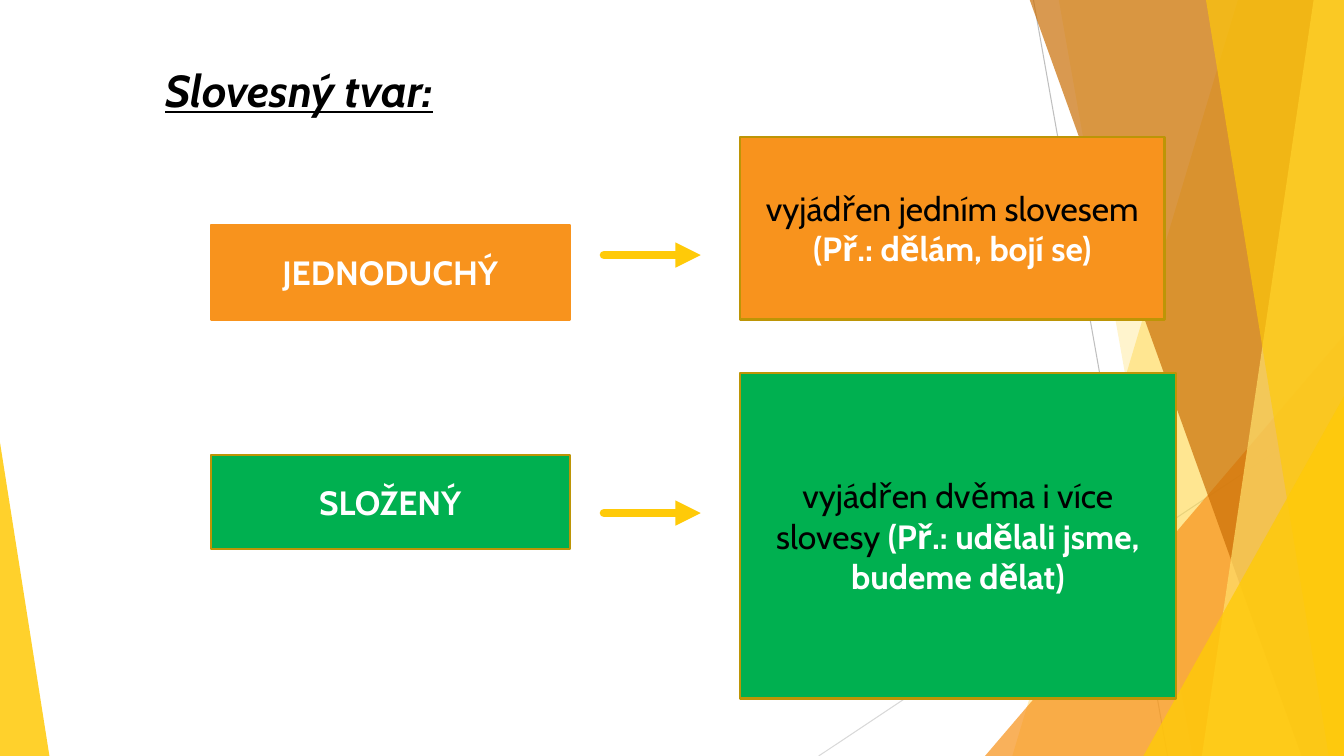
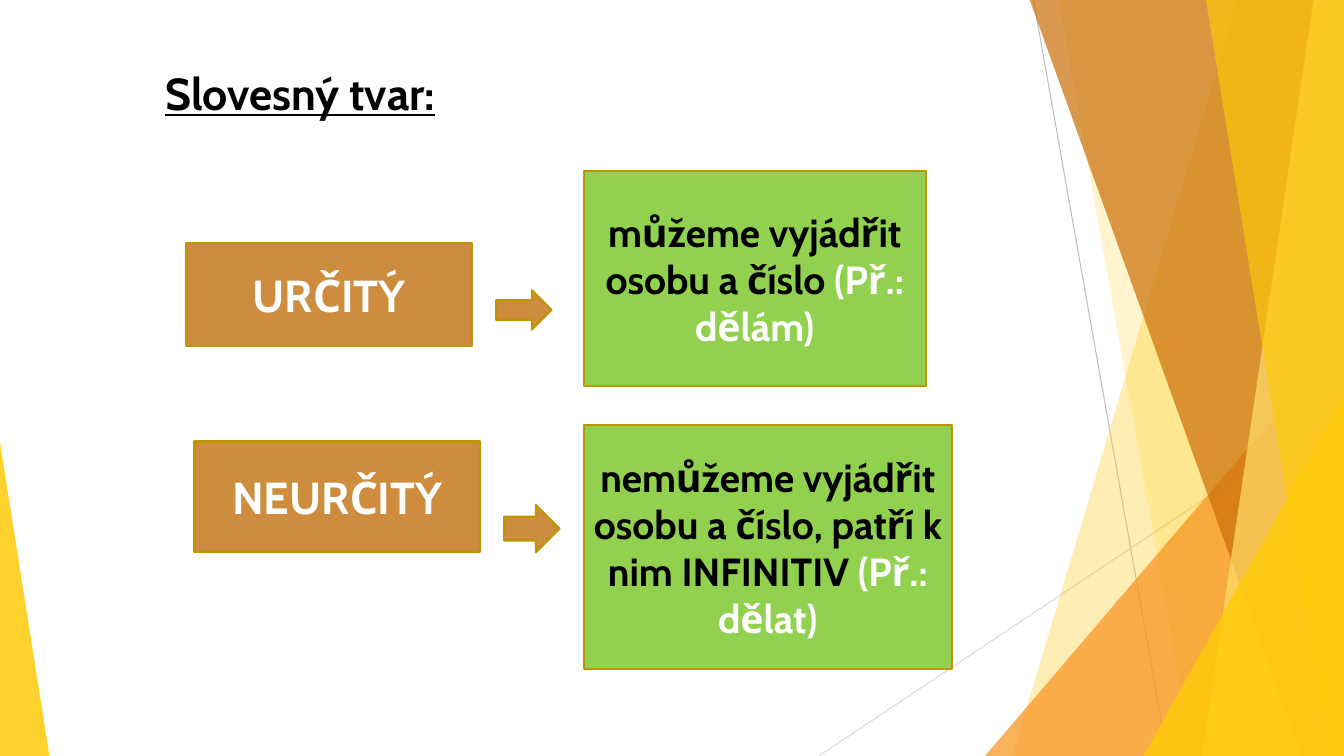
from lxml.etree import SubElement
from pptx import Presentation
from pptx.dml.color import RGBColor
from pptx.enum.shapes import MSO_CONNECTOR as Connector, MSO_SHAPE as Shape
from pptx.enum.text import MSO_ANCHOR as Anchor, MSO_AUTO_SIZE as AutoSize, PP_ALIGN as Align
from pptx.oxml.ns import qn
from pptx.util import Emu, Pt

PX = 9144  # EMU in one px, 100 px to the inch
WIDTH, HEIGHT = 1333, 750
TITLE_ONLY = 5

FONT = "Cabin"
BLACK, WHITE = "000000", "FFFFFF"
GOLD, PALE_GOLD, DARK_GOLD = "FFCA08", "FFDF6B", "BD9506"
ORANGE, BROWN, TAN = "F8931D", "CA6F06", "CE8D3E"
GREEN, LIME = "00B050", "92D050"


def px(*lengths):
    return [Emu(length * PX) for length in lengths]


def rgb(color):
    return RGBColor.from_string(color)


def add_span(para, text, color=BLACK, size=24, bold=False, italic=False, underline=False):
    span = para.add_run()
    span.text = text
    font = span.font
    font.name, font.size, font.color.rgb = FONT, Pt(size), rgb(color)
    font.bold, font.italic, font.underline = bold, italic, underline


class SlideWriter:
    """Holds the deck's style and the slide being written."""

    def __init__(self, deck):
        self.deck = deck
        self.page = None

    def start(self, title, top, italic=False):
        self.page = self.deck.slides.add_slide(self.deck.slide_layouts[TITLE_ONLY])
        self.background()
        box = self.page.shapes.title
        box.left, box.top, box.width, box.height = px(154, top, 800, 70)
        frame = box.text_frame
        frame.auto_size, frame.vertical_anchor = AutoSize.NONE, Anchor.TOP
        para = frame.paragraphs[0]
        para.alignment = Align.LEFT
        add_span(para, title, size=32, bold=True, italic=italic, underline=True)

    def background(self):
        self.line(1025, 0, 1158, HEIGHT, "BFBFBF")
        self.line(WIDTH, 403, 812, HEIGHT, "D9D9D9")
        self.facet(1228, 1004, GOLD, 30)
        self.facet(1050, 1183, GOLD, 20)
        self.triangle(977, 333, 356, 1, ORANGE, 72)
        self.facet(1021, 1291, BROWN, 70)
        self.facet(1303, 1192, PALE_GOLD, 70)
        self.facet(1196, 1318, GOLD, 65)
        self.triangle(1134, 393, 199, 1, GOLD, 80)
        self.triangle(0, 439, 49, 0, GOLD, 85)

    def paint(self, shape, fill, outline=None, opacity=100):
        shape.shadow.inherit = False
        shape.fill.solid()
        shape.fill.fore_color.rgb = rgb(fill)
        if outline:
            shape.line.color.rgb = rgb(outline)
            shape.line.width = Pt(1.5)
        else:
            shape.line.fill.background()
        if opacity < 100:
            tint = shape.element.spPr.find(qn("a:solidFill")).find(qn("a:srgbClr"))
            SubElement(tint, qn("a:alpha"), val=str(opacity * 1000))

    def facet(self, top_x, bottom_x, color, opacity):
        """Fill the area between a slanted edge and the slide's right side."""
        outline = self.page.shapes.build_freeform(top_x, -1, scale=PX)
        outline.add_line_segments([(WIDTH, -1), (WIDTH, HEIGHT), (bottom_x, HEIGHT)])
        self.paint(outline.convert_to_shape(), color, opacity=opacity)

    def triangle(self, left, top, width, apex, color, opacity):
        """Draw a triangle down to the slide's bottom, apex 0 at left or 1 at right."""
        shape = self.page.shapes.add_shape(
            Shape.ISOSCELES_TRIANGLE, *px(left, top, width, HEIGHT - top))
        shape.adjustments[0] = apex
        self.paint(shape, color, opacity=opacity)

    def line(self, x1, y1, x2, y2, color, width=0.75, arrow=False):
        line = self.page.shapes.add_connector(Connector.STRAIGHT, *px(x1, y1, x2, y2))
        line.line.color.rgb = rgb(color)
        line.line.width = Pt(width)
        properties = line.element.spPr
        if arrow:
            stroke = properties.find(qn("a:ln"))
            stroke.set("cap", "rnd")
            SubElement(stroke, qn("a:tailEnd"), type="triangle")
        SubElement(properties, qn("a:effectLst"))

    def block_arrow(self, left, top, width, height, fill):
        arrow = self.page.shapes.add_shape(Shape.RIGHT_ARROW, *px(left, top, width, height))
        self.paint(arrow, fill, DARK_GOLD)

    def box(self, left, top, width, height, fill, outline=DARK_GOLD):
        """Add a filled rectangle and return its centred paragraph."""
        box = self.page.shapes.add_shape(Shape.RECTANGLE, *px(left, top, width, height))
        self.paint(box, fill, outline)
        frame = box.text_frame
        frame.word_wrap, frame.vertical_anchor = True, Anchor.MIDDLE
        para = frame.paragraphs[0]
        para.alignment = Align.CENTER
        return para

    def label(self, text, *place, size=24, **style):
        add_span(self.box(*place, **style), text, color=WHITE, size=size, bold=True)

    def definition(self, text, example, *place, fill, size=24, bold=False):
        para = self.box(*place, fill=fill)
        add_span(para, text, size=size, bold=bold)
        add_span(para, example, color=WHITE, size=size, bold=True)


def simple_and_compound(writer):
    writer.start("Slovesný tvar:", 57, italic=True)
    writer.label("JEDNODUCHÝ", 209, 223, 356, 94, fill=ORANGE, outline=ORANGE)
    writer.label("SLOŽENÝ", 209, 451, 356, 94, fill=GREEN)
    writer.definition("vyjádřen jedním slovesem ", "(Př.: dělám, bojí se)",
                      734, 136, 421, 181, fill=ORANGE)
    writer.definition("vyjádřen dvěma i více slovesy ", "(Př.: udělali jsme, budeme dělat)",
                      734, 370, 432, 323, fill=GREEN)
    for y in (253, 509):
        writer.line(599, y, 695, y, GOLD, width=6, arrow=True)


def finite_and_infinite(writer):
    writer.start("Slovesný tvar:", 60)
    writer.label("URČITÝ", 185, 241, 283, 102, fill=TAN, size=32)
    writer.label("NEURČITÝ", 193, 438, 283, 110, fill=TAN, size=32)
    writer.definition("můžeme vyjádřit osobu a číslo ", "(Př.: dělám)",
                      579, 170, 339, 213, fill=LIME, size=28, bold=True)
    writer.definition("nemůžeme vyjádřit osobu a číslo, patří k nim INFINITIV ", "(Př.: dělat)",
                      579, 422, 365, 242, fill=LIME, size=28, bold=True)
    writer.block_arrow(492, 288, 55, 39, TAN)
    writer.block_arrow(500, 501, 55, 47, TAN)


def main():
    deck = Presentation()
    deck.slide_width, deck.slide_height = px(WIDTH, HEIGHT)
    writer = SlideWriter(deck)
    simple_and_compound(writer)
    finite_and_infinite(writer)
    deck.save("out.pptx")


if __name__ == "__main__":
    main()
